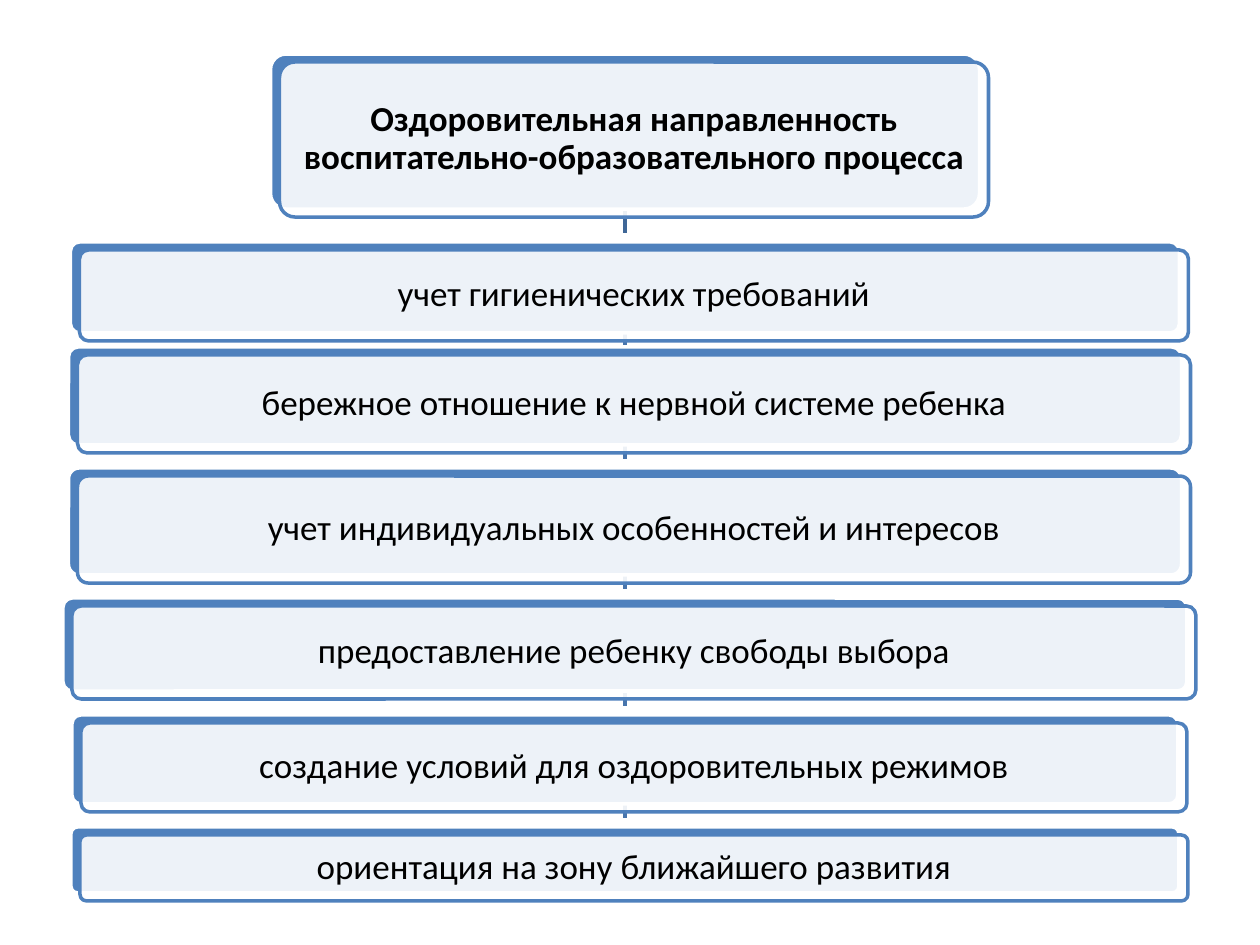
"""Build a slide with a header card and a chain of six principle cards."""
from pptx import Presentation
from pptx.dml.color import RGBColor
from pptx.enum.shapes import MSO_CONNECTOR as CONN, MSO_SHAPE as SHAPE
from pptx.enum.text import MSO_ANCHOR as ANCHOR, MSO_AUTO_SIZE as FIT, PP_ALIGN as ALIGN
from pptx.oxml.ns import qn
from pptx.util import Pt
from lxml.etree import SubElement

TITLE = "Оздоровительная направленность воспитательно-образовательного процесса"
CARDS = [  # text, top, width, height
    (TITLE, 54, 709, 155),
    ("учет гигиенических требований", 242, 1109, 91),
    ("бережное отношение к нервной системе ребенка", 347, 1113, 98),
    ("учет индивидуальных особенностей и интересов", 468, 1113, 107),
    ("предоставление ребенку свободы выбора", 598, 1124, 93),
    ("создание условий для оздоровительных режимов", 715, 1106, 89),
    ("ориентация на зону ближайшего развития", 827, 1108, 66),
]
CENTER, SHIFT_X, SHIFT_Y = 625, 9, 8
INSET, MIN_TICK, TICK_GAP = 10, 14, 9
BLUE, WHITE, BLACK = "4F81BD", "FFFFFF", "000000"
TICK_COLORS = ["3F6797"] + ["4875AC"] * 5
FONT = {"name": "Calibri", "size": Pt(20)}


def px(n):
    return round(n * 914400 / 126)


def rgb(value):
    return RGBColor.from_string(value)


def set_attrs(obj, values):
    for name, value in values.items():
        setattr(obj, name, value)


def add_card(shapes, box, fill, line, alpha=None):
    sp = shapes.add_shape(SHAPE.ROUNDED_RECTANGLE, *map(px, box))
    sp.adjustments[0] = 0.1
    sp.shadow.inherit = False
    sp.fill.solid()
    sp.fill.fore_color.rgb = rgb(fill)
    sp.line.color.rgb = rgb(line)
    sp.line.width = Pt(2)
    if alpha:
        color = sp._element.spPr.find(qn("a:solidFill"))[0]
        SubElement(color, qn("a:alpha")).set("val", str(alpha * 1000))
    return sp


def write(sp, text, bold=False):
    tf = sp.text_frame
    tf.text = text
    set_attrs(tf, {"word_wrap": True, "auto_size": FIT.NONE,
                   "vertical_anchor": ANCHOR.MIDDLE,
                   "margin_left": px(INSET), "margin_right": px(INSET),
                   "margin_top": px(INSET), "margin_bottom": px(INSET)})
    p = tf.paragraphs[0]
    set_attrs(p, {"alignment": ALIGN.CENTER, "line_spacing": 0.9})
    font = p.runs[0].font
    set_attrs(font, {**FONT, "bold": bold})
    font.color.rgb = rgb(BLACK)


def add_tick(shapes, bottom, next_top, color):
    end = max(bottom + MIN_TICK, next_top - TICK_GAP)
    tick = shapes.add_connector(CONN.STRAIGHT, px(CENTER), px(bottom), px(CENTER), px(end))
    tick.line.color.rgb = rgb(color)
    tick.line.width = Pt(2)
    SubElement(tick._element.spPr, qn("a:effectLst"))
    return tick


def main():
    prs = Presentation()
    prs.slide_width, prs.slide_height = px(1260), px(945)
    s = prs.slides.add_slide(prs.slide_layouts[5])
    shapes = s.shapes
    ticks = [add_tick(shapes, top + h, below[1], color)
             for (_, top, _, h), below, color in zip(CARDS, CARDS[1:], TICK_COLORS)]

    backs = []
    for text, top, w, h in CARDS:
        left = CENTER - w / 2
        front_box = (left + SHIFT_X, top + SHIFT_Y, w, h)
        backs.append(add_card(shapes, (left, top, w, h), BLUE, WHITE))
        front = add_card(shapes, front_box, WHITE, BLUE, alpha=90)
        if text == TITLE:
            title = shapes.title
            set_attrs(title, dict(zip(("left", "top", "width", "height"), map(px, front_box))))
            write(title, text, bold=True)
            front._element.addnext(title._element)
        else:
            write(front, text)

    for tick, back in zip(ticks, backs):
        tick.begin_connect(back, 2)
    prs.save("out.pptx")


if __name__ == "__main__":
    main()
